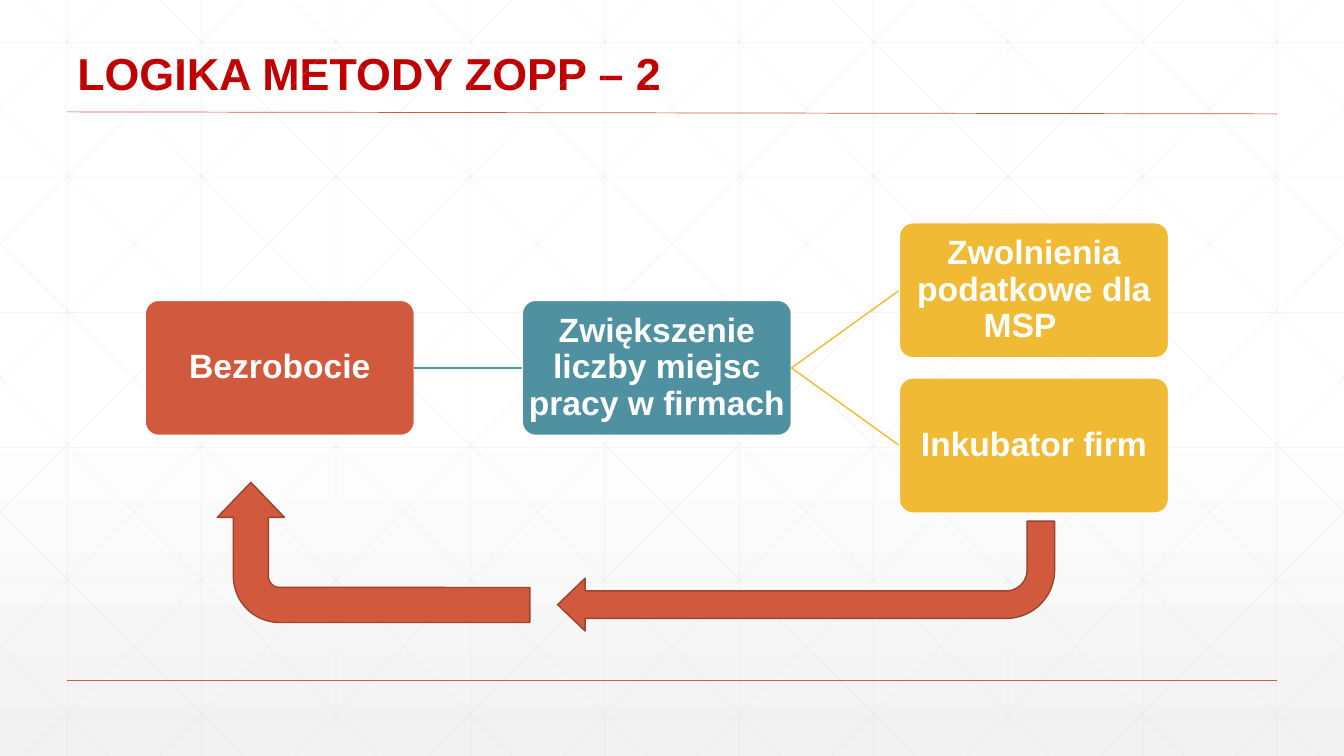
from copy import deepcopy

from lxml import etree
from pptx import Presentation, util as u
from pptx.dml.color import RGBColor
from pptx.enum import shapes, text
from pptx.oxml.ns import qn

W, H = 13.33, 7.5
CELL = W / 10
MARGIN = CELL / 2
BOX_W, BOX_H = 2.67, 1.34
COL, ROW = 3.74, 0.77
LEFT, TOP = 1.44, 2.98
RED, TEAL, GOLD, WHITE = "D15A3E", "4F91A1", "F0BA34", "FFFFFF"

# label, column, row, colour, column and row of the parent
BOXES = [
    ("Bezrobocie", 0, 0, RED, None),
    ("Zwiększenie liczby miejsc pracy w firmach", 1, 0, TEAL, (0, 0)),
    ("Zwolnienia podatkowe dla MSP \t", 2, -1, GOLD, (1, 0)),
    ("Inkubator firm", 2, 1, GOLD, (1, 0)),
]


def rgb(color):
    return RGBColor.from_string(color)


def set_alpha(color_el, percent):
    etree.SubElement(color_el, qn("a:alpha")).set("val", str(percent * 1000))


def add_line(s, start, end, color, width=1, alpha=None):
    c = s.shapes.add_connector(shapes.MSO_CONNECTOR.STRAIGHT,
                               *map(u.Inches, (*start, *end)))
    c.line.color.rgb = rgb(color)
    c.line.width = u.Pt(width)
    sp_pr = c._element.spPr
    if alpha:
        set_alpha(sp_pr.find(".//" + qn("a:srgbClr")), alpha)
    etree.SubElement(sp_pr, qn("a:effectLst"))


def add_shape(s, kind, at, fill, line, adjustments, rotation=0):
    sp = s.shapes.add_shape(kind, *map(u.Inches, at))
    sp.shadow.inherit = False
    sp.fill.solid()
    sp.fill.fore_color.rgb = rgb(fill)
    sp.line.color.rgb = rgb(line)
    sp.line.width = u.Pt(1)
    sp.rotation = rotation
    for i, value in enumerate(adjustments):
        sp.adjustments[i] = value
    return sp


def set_text(sp, content, size, color=WHITE, align=text.PP_ALIGN.CENTER,
             anchor=text.MSO_ANCHOR.MIDDLE, margin=None):
    tf = sp.text_frame
    tf.word_wrap = True
    tf.auto_size = text.MSO_AUTO_SIZE.NONE
    tf.vertical_anchor = anchor
    if margin is not None:
        tf.margin_left = tf.margin_right = u.Inches(margin)
        tf.margin_top = tf.margin_bottom = u.Inches(margin)
    p = tf.paragraphs[0]
    p.alignment = align
    p.line_spacing = 0.9
    r = p.add_run()
    r.text = content
    r.font.name = "Arial"
    r.font.size = u.Pt(size)
    r.font.bold = True
    r.font.color.rgb = rgb(color)


def set_background(s):
    fill = s.background.fill
    fill.gradient()
    fill.gradient_angle = 270
    stop_list = s._element.xpath(".//a:gsLst")[0]
    stop_list.append(deepcopy(stop_list[0]))
    colors = [(0, WHITE), (0.53, WHITE), (1, "F2F2F2")]
    for stop, (position, color) in zip(fill.gradient_stops, colors):
        stop.position = position
        stop.color.rgb = rgb(color)
    set_alpha(stop_list[-1][0], 65)


def add_lattice(s):
    """Draw the faint square grid and its diagonals, cut at the slide edges."""
    lines = [((x, 0), (x, H)) for x in (MARGIN + CELL * i for i in range(10))]
    lines += [((0, y), (W, y)) for y in (0.42 + 1.34 * i for i in range(6))]
    for i in range(-5, 10):
        x = 0.25 + CELL * i
        x1, y1 = max(x, 0), max(-x, 0)
        x2, y2 = min(x + H, W), min(W - x, H)
        lines += [((x1, y1), (x2, y2)), ((W - x1, y1), (W - x2, y2))]
    for start, end in lines:
        add_line(s, start, end, "D9D9D9", 0.5, alpha=25)


def add_box(s, label, col, row, color, parent):
    x, y = LEFT + COL * col, TOP + ROW * row
    if parent:
        start = (LEFT + COL * parent[0] + BOX_W,
                 TOP + ROW * parent[1] + BOX_H / 2)
        add_line(s, start, (x, y + BOX_H / 2), color)
    sp = add_shape(s, shapes.MSO_SHAPE.ROUNDED_RECTANGLE,
                   (x, y, BOX_W, BOX_H), color, WHITE, [0.1])
    set_text(sp, label, 24, margin=0.02)


def add_bent_arrow(s, at, rotation, adjustments):
    add_shape(s, shapes.MSO_SHAPE.BENT_ARROW, at, RED, "9B432E",
              adjustments, rotation)


def main():
    prs = Presentation()
    prs.slide_width, prs.slide_height = u.Inches(W), u.Inches(H)
    s = prs.slides.add_slide(prs.slide_layouts[5])
    set_background(s)
    add_lattice(s)
    add_line(s, (MARGIN, 0.9 * H), (W - MARGIN, 0.9 * H), RED)
    add_line(s, (MARGIN, 1.11), (W - MARGIN, 1.13), RED, 0.5)

    title = s.shapes.title
    title.left, title.top = u.Inches(MARGIN), u.Inches(-0.21)
    title.width, title.height = u.Inches(10.5), u.Inches(1.25)
    set_text(title, "LOGIKA METODY ZOPP – 2", 32, "C00000",
             text.PP_ALIGN.LEFT, text.MSO_ANCHOR.BOTTOM)

    for box in BOXES:
        add_box(s, *box)
    add_bent_arrow(s, (5.53, 5.17, 4.93, 1.09), 180, [0.25, 0.24, 0.25, 0.44])
    add_bent_arrow(s, (3.01, 3.93, 1.39, 3.1), 270, [0.25, 0.24, 0.25, 0.33])
    prs.save("out.pptx")


if __name__ == "__main__":
    main()
